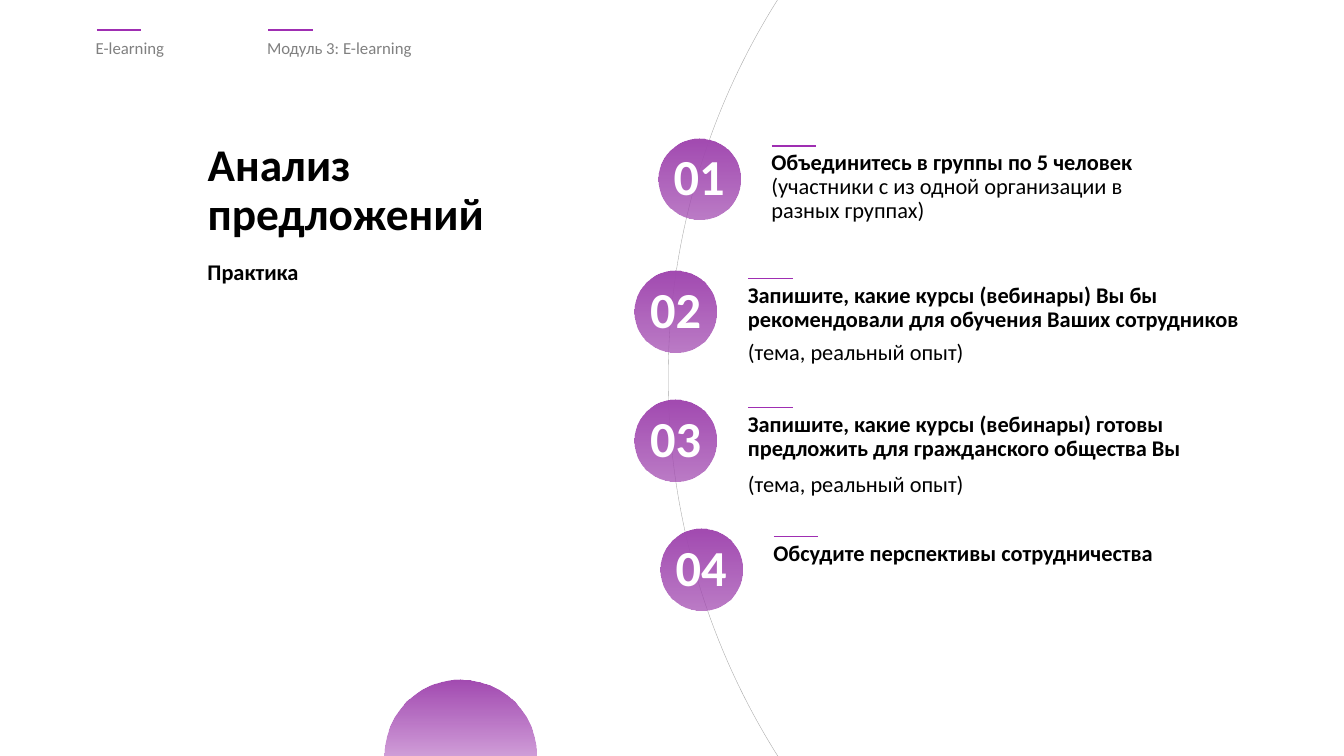
from lxml import etree
from pptx import Presentation
from pptx.dml.color import RGBColor
from pptx.enum.shapes import MSO_CONNECTOR, MSO_SHAPE
from pptx.enum.text import MSO_ANCHOR, MSO_AUTO_SIZE, PP_ALIGN
from pptx.oxml.ns import qn
from pptx.util import Cm, Pt

PURPLE = RGBColor(0x9F, 0x2E, 0xB2)
ORCHID = RGBColor(0xA2, 0x4A, 0xB1)
SILVER = RGBColor(0xA6, 0xA6, 0xA6)
GRAY = RGBColor(0x80, 0x80, 0x80)
BLACK = RGBColor(0, 0, 0)
WHITE = RGBColor(0xFF, 0xFF, 0xFF)

DISC = 2.06
RULE = 1.12


def write(sp, text, size, color, bold=False):
    tf = sp.text_frame
    tf.word_wrap = True
    tf.auto_size = MSO_AUTO_SIZE.NONE
    tf.vertical_anchor = MSO_ANCHOR.TOP
    tf.text = text
    p = tf.paragraphs[0]
    p.alignment = PP_ALIGN.LEFT
    p.line_spacing = 0.9
    font = p.runs[0].font
    font.name = "Calibri"
    font.size = Pt(size)
    font.bold = bold
    font.color.rgb = color


def add_disc(x, y, size, end_color, end_alpha):
    sp = s.shapes.add_shape(MSO_SHAPE.OVAL, Cm(x), Cm(y), Cm(size), Cm(size))
    sp.shadow.inherit = False
    sp.line.fill.background()
    sp.fill.gradient()
    sp.fill.gradient_angle = 270
    for stop, color in zip(sp.fill.gradient_stops, (ORCHID, end_color)):
        stop.color.rgb = color
    end = sp.fill._xPr.findall(".//" + qn("a:srgbClr"))[-1]
    etree.SubElement(end, qn("a:alpha")).set("val", str(end_alpha * 1000))
    return sp


prs = Presentation()
prs.slide_width = Cm(33.87)
prs.slide_height = Cm(19.05)
s = prs.slides.add_slide(prs.slide_layouts[5])

title = s.shapes.title
title.left, title.top, title.width, title.height = Cm(4.98), Cm(3.45), Cm(10.82), Cm(3)
write(title, "Анализ предложений", 32.4, BLACK, True)

arc = s.shapes.add_shape(MSO_SHAPE.OVAL, Cm(16.84), Cm(-8.31), Cm(35.66), Cm(35.66))
arc.shadow.inherit = False
arc.fill.background()
arc.line.color.rgb = SILVER
arc.line.width = Pt(0.25)

add_disc(9.68, 17.12, 3.84, PURPLE, 0)

steps = [
    (16.59, 3.48, 11.7, "Объединитесь в группы по 5 человек",
     0.81, 9.75, "(участники с из одной организации в разных группах)"),
    (16, 6.83, 14.45, "Запишите, какие курсы (вебинары) Вы бы рекомендовали для обучения Ваших сотрудников",
     1.65, 10.92, "(тема, реальный опыт)"),
    (16, 10.08, 11.84, "Запишите, какие курсы (вебинары) готовы предложить для гражданского общества Вы",
     1.71, 10.92, "(тема, реальный опыт)"),
    (16.64, 13.33, 12.32, "Обсудите перспективы сотрудничества", 0, 0, ""),
]

rules = [(2.44, 0.76), (6.76, 0.76)]
texts = [
    (4.98, 6.45, 9.5, 1, "Практика", 16, BLACK, True),
    (2.16, 0.89, 4.2, 1, "E-learning", 12, GRAY, False),
    (6.48, 0.89, 6.43, 1, "Модуль 3: E-learning", 12, GRAY, False),
]

for number, (x, y, width, task, gap, detail_width, detail) in enumerate(steps, 1):
    disc = add_disc(x, y, DISC, ORCHID, 72)
    write(disc, f"{number:02}", 36, WHITE, True)
    tf = disc.text_frame
    tf.word_wrap = False
    tf.vertical_anchor = MSO_ANCHOR.MIDDLE
    tf.margin_left = tf.margin_right = tf.margin_top = tf.margin_bottom = 0
    tf.paragraphs[0].alignment = PP_ALIGN.CENTER
    rules.append((x + 2.86, y + 0.19))
    texts.append((x + 2.6, y + 0.2, width, 0.6, task, 16, BLACK, True))
    if detail:
        texts.append((x + 2.6, y + gap, detail_width, 1.2, detail, 16, BLACK, False))

for x, y in rules:
    rule = s.shapes.add_connector(MSO_CONNECTOR.STRAIGHT, Cm(x), Cm(y), Cm(x + RULE), Cm(y))
    rule.line.color.rgb = PURPLE
    rule.line.width = Pt(1.25)
    etree.SubElement(rule._element.spPr, qn("a:effectLst"))

for x, y, width, height, text, size, color, bold in texts:
    box = s.shapes.add_textbox(Cm(x), Cm(y), Cm(width), Cm(height))
    write(box, text, size, color, bold)

prs.save("out.pptx")
